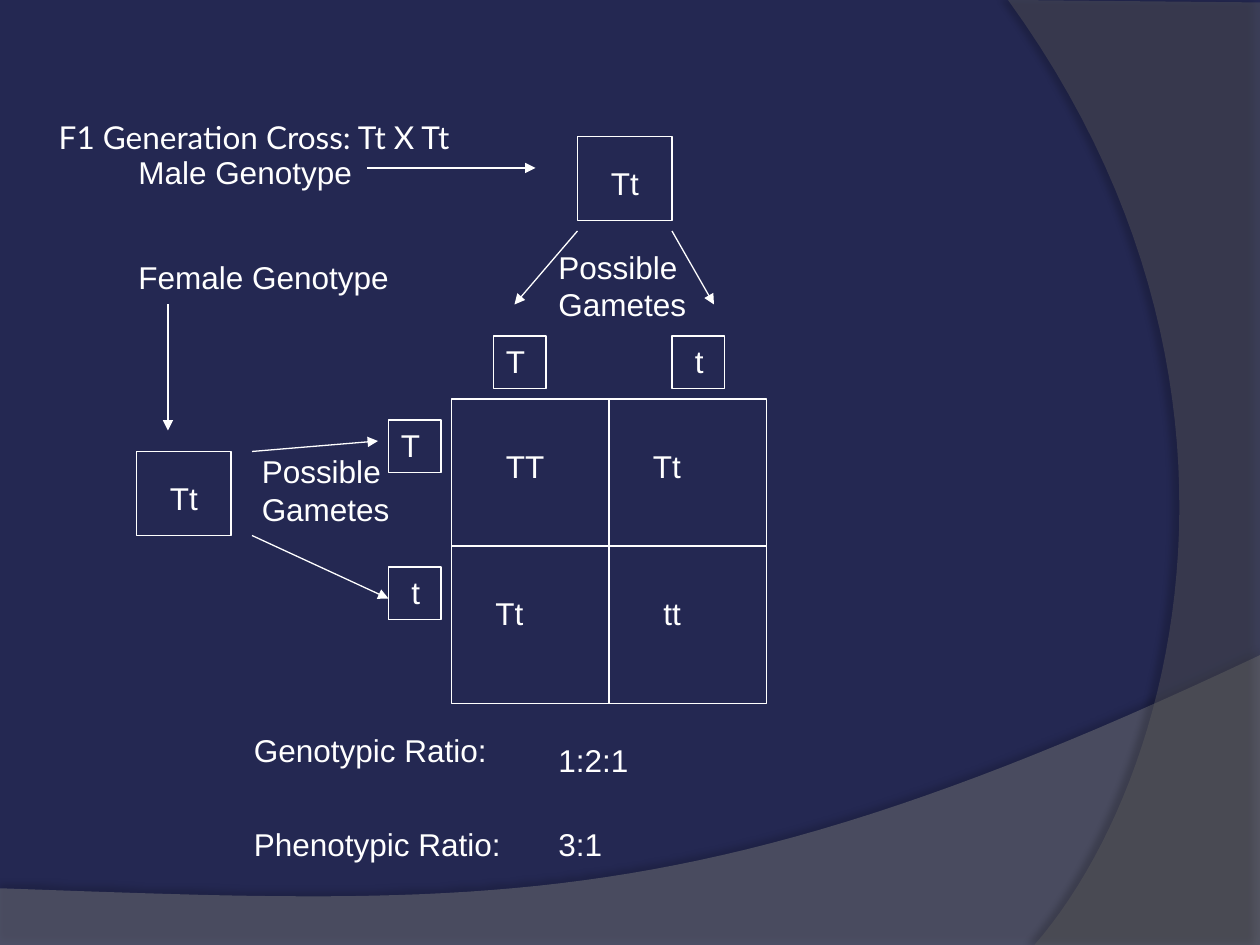
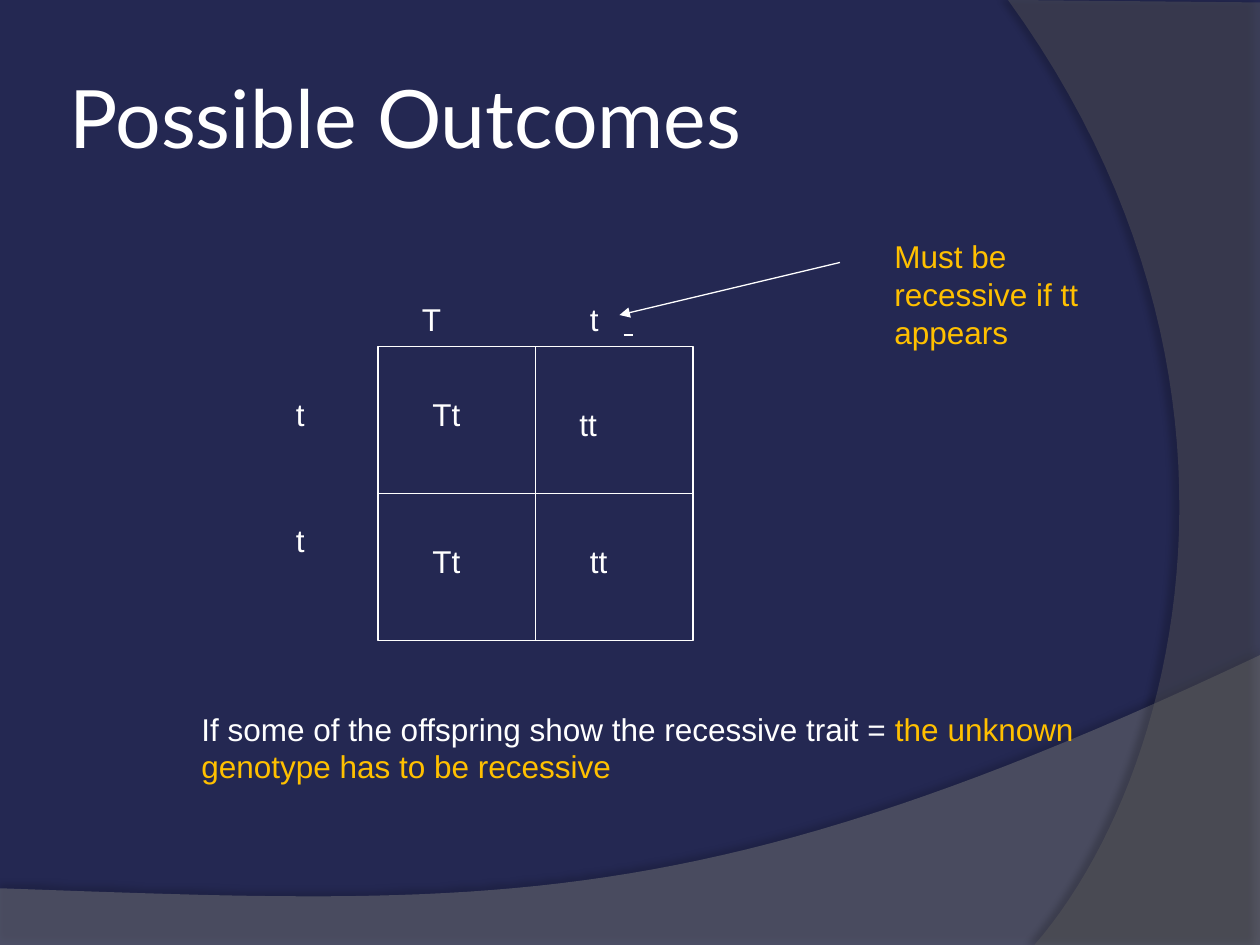
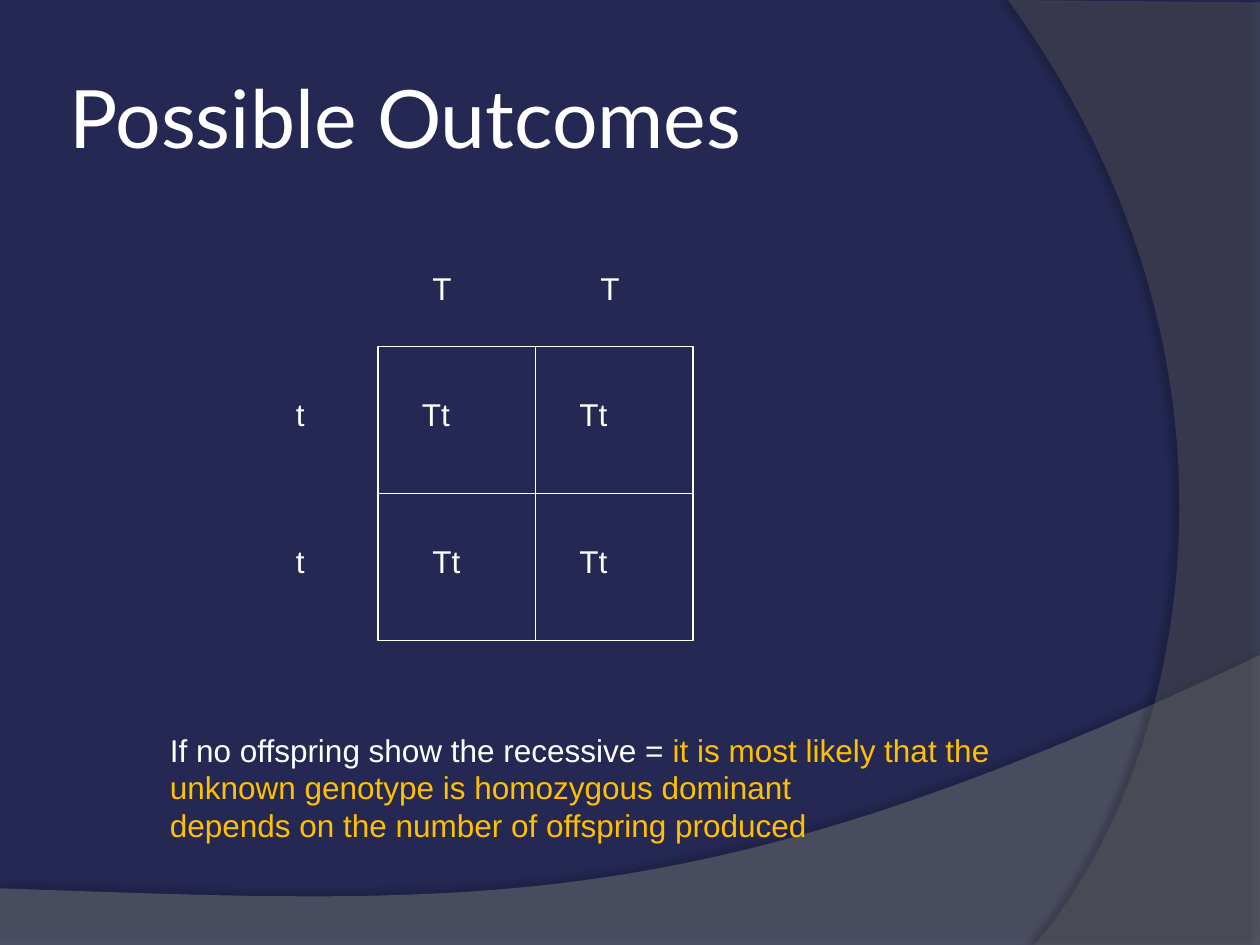
from lxml import etree
from pptx import Presentation, util as u
from pptx.dml.color import RGBColor
from pptx.enum import shapes, text
from pptx.oxml import parse_xml
from pptx.oxml.ns import nsdecls, qn

WHITE, GOLD, NAVY = "FFFFFF", "FFC000", "242852"
UNIT = u.Inches(1) // 12
BANDS = [
    dict(fill="7F7F7F", alpha=45, dark=35, dist=3.5, angle=270,
         corners=[(0, 7.05), (0, 7.5), (10, 7.5), (10, 5.2)],
         curve=[(5.59, 7.29), (3.91, 7.19), (0, 7.05)]),
    dict(fill="5E5E5E", alpha=40, dark=45, dist=4, angle=180,
         corners=[(10, 0.02), (10, 7.5), (8.21, 7.5)],
         curve=[(9.35, 6.19), (10.18, 3), (8, 0)]),
]
HEAD = ("Possible Outcomes", 6, 3.6, 98, 15, 46)
SQUARE = (36, 33, 30, 28, 47)

# Positions count twelfths of an inch; "|" switches a paragraph to gold.
SLIDES = [
    dict(
        title=("F1 Generation Cross: Tt X Tt", 5, 11, 108, 4, 18),
        square=(43, 38, 30, 29, 52),
        boxes=[(55, 13, 9, 8), (13, 43, 9, 8), (37, 40, 5, 5),
               (37, 54, 5, 5), (47, 32, 5, 5), (64, 32, 5, 5)],
        arrows=[(35, 16, 51, 16), (16, 29, 16, 41), (24, 43, 36, 42),
                (24, 51, 37, 57), (55, 22, 49, 29), (64, 22, 68, 29)],
        words=[("Male Genotype", 12, 14, 23), ("Female Genotype", 12, 24, 28),
               ("Possible\nGametes", 23.75, 42.5, 16, 2),
               ("Possible\nGametes", 52, 23, 16, 2),
               ("Tt", 57, 15, 6), ("Tt", 15, 45, 6),
               ("T", 37, 40, 5), ("T", 47, 32, 3),
               ("t", 65, 32, 3), ("t", 38, 54, 3),
               ("TT", 47, 42, 8), ("Tt", 61, 42, 6),
               ("Tt", 46, 56, 6), ("tt", 62, 56, 6),
               ("Genotypic Ratio:", 23, 69, 26), ("1:2:1", 52, 70, 12),
               ("Phenotypic Ratio:", 23, 78, 27), ("3:1", 52, 78, 12)]),
    dict(
        title=HEAD, square=SQUARE,
        arrows=[(80, 25, 59, 30)], dashes=[(59.4, 31.9, 60.3, 31.9)],
        words=[("T", 39, 28, 6), ("t", 55, 28, 4),
               ("t", 27, 37, 4), ("t", 27, 49, 4),
               ("Tt", 40, 37, 6), ("tt", 54, 38, 6),
               ("Tt", 40, 51, 6), ("tt", 55, 51, 6),
               ("|Must be recessive if tt appears", 84, 22, 26, 3),
               ("If some of the offspring show the recessive trait = "
                "|the unknown genotype has to be recessive", 18, 67, 91, 2)]),
    dict(
        title=HEAD, square=SQUARE,
        words=[("T", 40, 25, 8), ("T", 56, 25, 8),
               ("t", 27, 37, 8), ("t", 27, 51, 8),
               ("Tt", 39, 37, 8), ("Tt", 54, 37, 8),
               ("Tt", 40, 51, 8), ("Tt", 54, 51, 8),
               ("If no offspring show the recessive = |it is most likely that "
                "the unknown genotype is homozygous dominant\n"
                "|depends on the number of offspring produced",
                15, 69, 90, 3)]),
]


def rgb(code):
    return RGBColor.from_string(code)


def grid(*nums):
    return [round(n * UNIT) for n in nums]


def bend(start, one, two, end, steps=48):
    for i in range(1, steps + 1):
        t = i / steps
        s = 1 - t
        yield tuple(s**3 * a + 3 * s * s * t * b + 3 * s * t * t * c + t**3 * d
                    for a, b, c, d in zip(start, one, two, end))


def add_band(slide, band):
    corners = band["corners"]
    dots = corners + list(bend(corners[-1], *band["curve"]))
    dots = [(u.Inches(x), u.Inches(y)) for x, y in dots]
    path = slide.shapes.build_freeform(*dots[0])
    path.add_line_segments(dots[1:], close=True)
    shape = path.convert_to_shape()
    shape.fill.solid()
    shape.fill.fore_color.rgb = rgb(band["fill"])
    shape.line.fill.background()
    props = shape.element.spPr
    tint = props.find(qn("a:solidFill")).find(qn("a:srgbClr"))
    etree.SubElement(tint, qn("a:alpha"), val=str(band["alpha"] * 1000))
    props.append(parse_xml(
        f'<a:effectLst {nsdecls("a")}><a:outerShdw blurRad="{u.Pt(4)}" '
        f'dist="{u.Pt(band["dist"])}" dir="{band["angle"] * 60000}" '
        f'algn="ctr" rotWithShape="0"><a:srgbClr val="000000">'
        f'<a:alpha val="{band["dark"] * 1000}"/></a:srgbClr>'
        f'</a:outerShdw></a:effectLst>'))


def add_box(slide, *place):
    box = slide.shapes.add_shape(shapes.MSO_SHAPE.RECTANGLE, *grid(*place))
    box.shadow.inherit = False
    box.fill.background()
    box.line.color.rgb = rgb(WHITE)
    box.line.width = u.Pt(0.75)
    return box


def add_line(slide, ends, arrow=False):
    line = slide.shapes.add_connector(
        shapes.MSO_CONNECTOR.STRAIGHT, *grid(*ends))
    line.line.color.rgb = rgb(WHITE)
    line.line.width = u.Pt(0.75)
    props = line.element.spPr
    if arrow:
        etree.SubElement(props.find(qn("a:ln")), qn("a:tailEnd"),
                         type="triangle")
    etree.SubElement(props, qn("a:effectLst"))
    return line


def add_square(slide, x, y, w, h, row):
    box = add_box(slide, x, y, w, h)
    mid = x + w / 2
    down = add_line(slide, (mid, y, mid, y + h))
    down.begin_connect(box, 0)
    down.end_connect(box, 2)
    cross = add_line(slide, (x, row, x + w, row))
    if row == y + h / 2:
        cross.begin_connect(box, 1)
        cross.end_connect(box, 3)


def add_text(slide, words, place, size=18, face="Arial"):
    frame = slide.shapes.add_textbox(*grid(*place)).text_frame
    frame.word_wrap = True
    for i, part in enumerate(words.split("\n")):
        para = frame.add_paragraph() if i else frame.paragraphs[0]
        plain, _, gold = part.partition("|")
        font = para.font
        font.size, font.name = u.Pt(size), face
        font.color.rgb = rgb(WHITE if plain else GOLD)
        for piece in filter(None, (plain, gold)):
            run = para.add_run()
            run.text = piece
            if plain and piece == gold:
                run.font.color.rgb = rgb(GOLD)
    return frame


def add_title(slide, words, x, y, w, h, size):
    frame = add_text(slide, words, (x, y, w, h), size, "Lato")
    frame.vertical_anchor = text.MSO_ANCHOR.MIDDLE
    frame.margin_left = frame.margin_right = u.Inches(0.05)


def add_word(slide, words, x, y, w, rows=1):
    add_text(slide, words, (x, y, w, 1.2 + 3.6 * rows))


def main():
    deck = Presentation()
    deck.slide_width, deck.slide_height = u.Inches(10), u.Inches(7.5)
    back = deck.slide_master.background.fill
    back.solid()
    back.fore_color.rgb = rgb(NAVY)
    for page in SLIDES:
        slide = deck.slides.add_slide(deck.slide_layouts[6])
        for band in BANDS:
            add_band(slide, band)
        add_title(slide, *page["title"])
        add_square(slide, *page["square"])
        for box in page.get("boxes", []):
            add_box(slide, *box)
        for ends in page.get("arrows", []):
            add_line(slide, ends, arrow=True)
        for ends in page.get("dashes", []):
            add_line(slide, ends)
        for word in page["words"]:
            add_word(slide, *word)
    deck.save("out.pptx")


if __name__ == "__main__":
    main()
